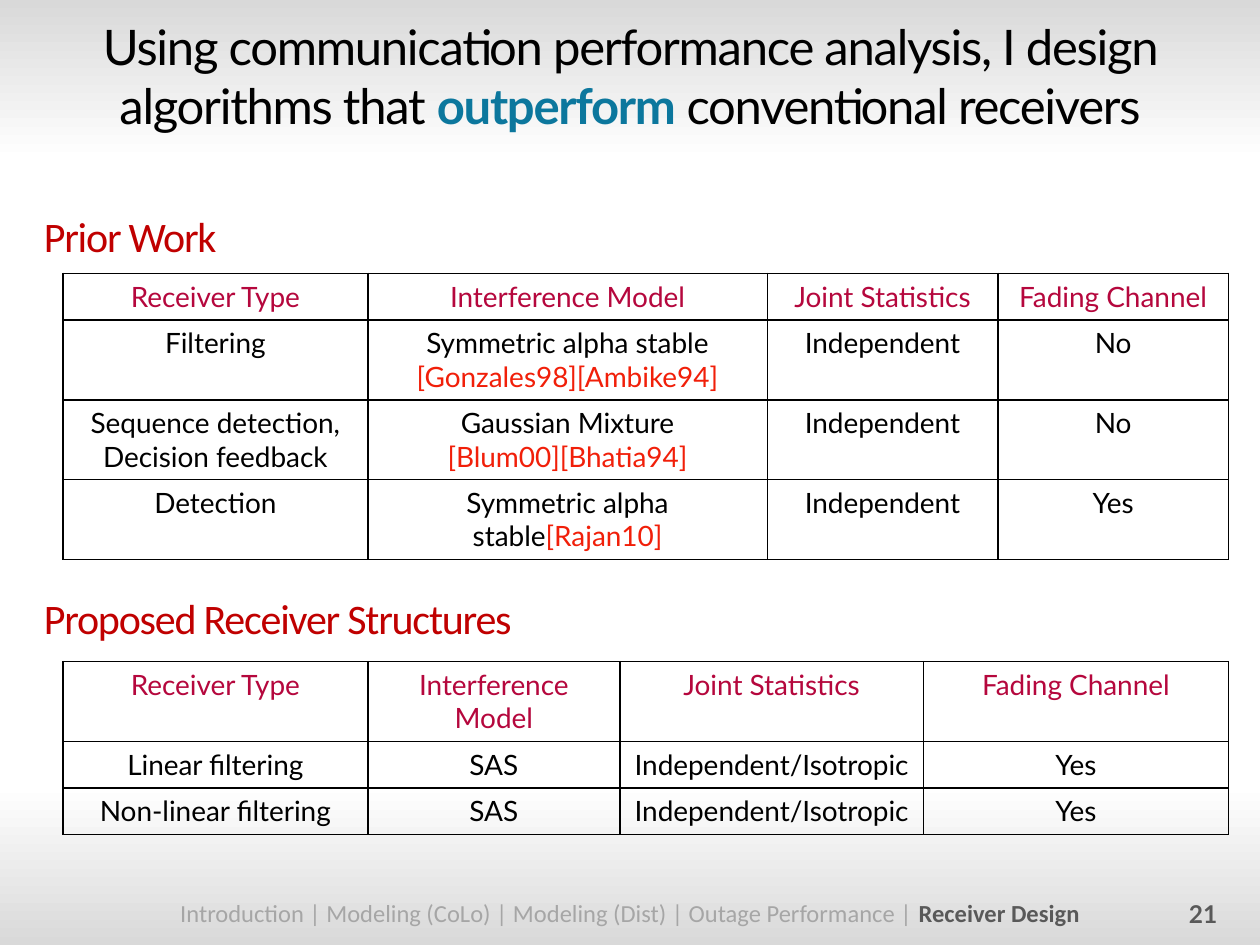
from lxml.etree import SubElement
from pptx import Presentation
from pptx.dml.color import RGBColor
from pptx.enum.text import MSO_ANCHOR, PP_ALIGN
from pptx.oxml.ns import qn
from pptx.util import Inches, Pt


class Theme:
    font, heading_font = "Lato", "Calibri"
    title, heading, cell, footer = 28, 24, 16, 14
    text, accent, section = "000000", "0C779D", "C00000"
    header, citation = "B5073D", "F11F09"
    muted, current = "A6A6A6", "595959"
    border = "000000"
    tracking = -0.7
    background = [(0, "D9D9D9"), (17, "FFFFFF"), (83, "FFFFFF"), (100, "D9D9D9")]


# Content: a span is (text, colour, bold); a cell is (text, citation)
TITLE = [
    ("Using communication performance analysis, I design algorithms that ", Theme.text, False),
    ("outperform ", Theme.accent, True),
    ("conventional receivers", Theme.text, False),
]
FOOTER = [
    ("Introduction | Modeling (CoLo) | Modeling (Dist) | Outage Performance | ", Theme.muted, False),
    ("Receiver Design", Theme.current, True),
]
PAGE_NUMBER = [("21", Theme.current, True)]
HEADER = ["Receiver Type", "Interference Model", "Joint Statistics", "Fading Channel"]
SECTIONS = [
    {
        "heading": "Prior Work", "heading_top": 1.62, "table_top": 2.17,
        "columns": [2.42, 3.17, 1.83, 1.83], "rows": [0.37, 0.63, 0.63, 0.63],
        "body": [
            ["Filtering", ("Symmetric alpha stable", " [Gonzales98][Ambike94]"), "Independent", "No"],
            ["Sequence detection, Decision feedback", ("Gaussian Mixture\n", "[Blum00][Bhatia94]"),
             "Independent", "No"],
            ["Detection", ("Symmetric alpha stable", "[Rajan10]"), "Independent", "Yes"],
        ],
    },
    {
        "heading": "Proposed Receiver Structures", "heading_top": 4.65, "table_top": 5.25,
        "columns": [2.42, 2, 2.41, 2.42], "rows": [0.63, 0.37, 0.37],
        "body": [
            ["Linear filtering", "SAS", "Independent/Isotropic", "Yes"],
            ["Non-linear filtering", "SAS", "Independent/Isotropic", "Yes"],
        ],
    },
]


def write(para, spans, size, font=Theme.font, align=PP_ALIGN.CENTER, tracking=0):
    para.alignment = align
    para.font.size, para.font.name = Pt(size), font
    for text, color, bold in spans:
        span = para.add_run()
        span.text = text.rstrip("\n")
        span.font.size, span.font.name = Pt(size), font
        span.font.bold = bold
        span.font.color.rgb = RGBColor.from_string(color)
        if tracking:
            span.font._element.set("spc", str(round(tracking * 100)))
        if text.endswith("\n"):
            para.add_line_break()


def add_text(page, left, top, width, height, spans, size, anchor=MSO_ANCHOR.TOP, **style):
    box = page.shapes.add_textbox(Inches(left), Inches(top), Inches(width), Inches(height))
    box.text_frame.word_wrap = True
    box.text_frame.vertical_anchor = anchor
    write(box.text_frame.paragraphs[0], spans, size, **style)


def set_borders(cell):
    properties = cell._tc.get_or_add_tcPr()
    for side in ("lnL", "lnR", "lnT", "lnB"):
        line = SubElement(properties, qn(f"a:{side}"), w=str(Pt(1)))
        fill = SubElement(line, qn("a:solidFill"))
        SubElement(fill, qn("a:srgbClr"), val=Theme.border)


def add_grid(page, section):
    widths, heights = section["columns"], section["rows"]
    table = page.shapes.add_table(
        len(heights), len(widths), Inches(0.5), Inches(section["table_top"]),
        Inches(sum(widths)), Inches(sum(heights))).table
    table.first_row = table.horz_banding = False
    for column, width in zip(table.columns, widths):
        column.width = Inches(width)
    for row, height in zip(table.rows, heights):
        row.height = Inches(height)
    for i, values in enumerate([HEADER] + section["body"]):
        color = Theme.text if i else Theme.header
        for j, value in enumerate(values):
            cell = table.cell(i, j)
            set_borders(cell)
            cell.fill.background()
            parts = (value,) if isinstance(value, str) else value
            spans = [(text, tint, False) for text, tint in zip(parts, (color, Theme.citation))]
            write(cell.text_frame.paragraphs[0], spans, Theme.cell)


def paint_background(page):
    fill = page.background.fill
    fill.gradient()
    fill.gradient_angle = 270
    stops = fill.gradient_stops._gsLst
    for stop in list(stops):
        stops.remove(stop)
    for position, color in Theme.background:
        stop = SubElement(stops, qn("a:gs"), pos=str(position * 1000))
        SubElement(stop, qn("a:srgbClr"), val=color)


def main():
    deck = Presentation()
    deck.slide_width, deck.slide_height = Inches(10), Inches(7.5)
    page = deck.slides.add_slide(deck.slide_layouts[6])
    paint_background(page)

    # Title
    add_text(page, 0.25, 0.08, 9.5, 1.05, TITLE, Theme.title, tracking=Theme.tracking)

    # Headed tables
    for section in SECTIONS:
        add_text(page, 0.25, section["heading_top"], 9.5, 0.5,
                 [(section["heading"], Theme.section, False)], Theme.heading,
                 font=Theme.heading_font, align=PP_ALIGN.LEFT, tracking=Theme.tracking)
        add_grid(page, section)

    # Footer and page number
    add_text(page, 0, 7.08, 10, 0.34, FOOTER, Theme.footer, font=Theme.heading_font)
    add_text(page, 7.43, 7.09, 2.33, 0.33, PAGE_NUMBER, Theme.footer,
             anchor=MSO_ANCHOR.MIDDLE, align=PP_ALIGN.RIGHT)

    deck.save("out.pptx")


if __name__ == "__main__":
    main()
